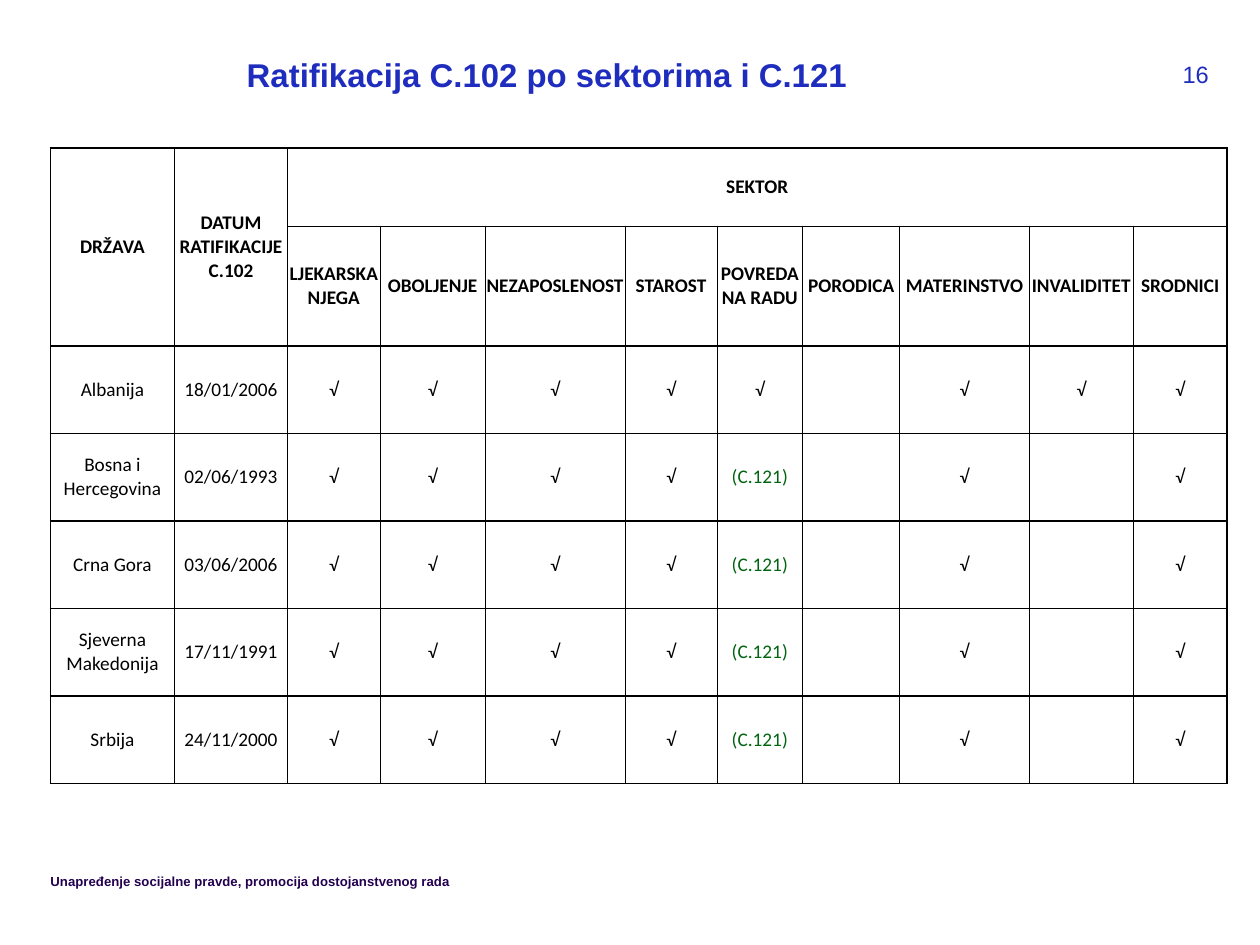
from lxml import etree
from pptx import Presentation
from pptx.dml.color import RGBColor
from pptx.enum import text as t
from pptx.oxml import ns
from pptx.util import Pt

THEME = {
    "title": {"name": "Arial", "size": Pt(18.8), "bold": True, "color": "1E2DBE"},
    "number": {"name": "Arial", "size": Pt(13.5), "bold": False, "color": "1E2DBE"},
    "footer": {"name": "Arial", "size": Pt(7.5), "bold": True, "color": "230050"},
    "header": {"name": "Calibri", "size": Pt(11), "bold": True, "color": "000000"},
    "body": {"name": "Calibri", "size": Pt(11), "bold": False, "color": "000000"},
    "note": {"name": "Calibri", "size": Pt(11), "bold": False, "color": "006411"},
    "border": "000000",
}
SECTORS = ["LJEKARSKA NJEGA", "OBOLJENJE", "NEZAPOSLENOST", "STAROST",
           "POVREDA NA RADU", "PORODICA", "MATERINSTVO", "INVALIDITET", "SRODNICI"]
YES, OTHER = "√", "(C.121)"
ALBANIA = [YES] * 5 + ["", YES, YES, YES]
OTHERS = [YES] * 4 + [OTHER, "", YES, "", YES]
ROWS = [
    ["DRŽAVA", "DATUM RATIFIKACIJE C.102", "SEKTOR"] + [""] * 8,
    ["", ""] + SECTORS,
    ["Albanija", "18/01/2006"] + ALBANIA,
    ["Bosna i Hercegovina", "02/06/1993"] + OTHERS,
    ["Crna Gora", "03/06/2006"] + OTHERS,
    ["Sjeverna Makedonija", "17/11/1991"] + OTHERS,
    ["Srbija", "24/11/2000"] + OTHERS,
]
COLUMN_WIDTHS = [71, 64.5, 53, 60, 80, 52.5, 49, 55.5, 74, 59.5, 53.5]
ROW_HEIGHTS = [44.75, 68.5] + [50] * 5
HEAVY_COLUMN_EDGES = {0, 1, 2, len(COLUMN_WIDTHS)}


def write(frame, words, style, align):
    frame.text = words
    frame.word_wrap = True
    para = frame.paragraphs[0]
    para.alignment = align
    for key, value in THEME[style].items():
        if key == "color":
            para.font.color.rgb = RGBColor.from_string(value)
        else:
            setattr(para.font, key, value)
        for span in para.runs:
            if key == "color":
                span.font.color.rgb = RGBColor.from_string(value)
            else:
                setattr(span.font, key, value)


def add_border(cell, side, points):
    line = etree.SubElement(cell._tc.get_or_add_tcPr(), ns.qn(f"a:ln{side}"),
                            w=str(int(Pt(points))))
    fill = etree.SubElement(line, ns.qn("a:solidFill"))
    etree.SubElement(fill, ns.qn("a:srgbClr"), val=THEME["border"])


deck = Presentation()
deck.slide_width, deck.slide_height = Pt(720), Pt(540)
page = deck.slides.add_slide(deck.slide_layouts[5])

# Title, footer and page number
title = page.shapes.title
footer = page.shapes.add_textbox(0, 0, 0, 0)
number = page.shapes.add_textbox(0, 0, 0, 0)
left, right, center = t.PP_ALIGN.LEFT, t.PP_ALIGN.RIGHT, t.PP_ALIGN.CENTER
for box, words, style, align, place in [
    (title, "Ratifikacija C.102 po sektorima i C.121", "title", left, (141, 34, 395, 34.5)),
    (footer, "Unapređenje socijalne pravde, promocija dostojanstvenog rada", "footer",
     left, (28.8, 499, 331, 14.5)),
    (number, "16", "number", right, (659, 34, 31.7, 22)),
]:
    box.left, box.top, box.width, box.height = map(Pt, place)
    frame = box.text_frame
    write(frame, words, style, align)
    for key, value in {"margin_left": 0, "margin_top": 0, "margin_right": 0,
                       "margin_bottom": 0, "vertical_anchor": t.MSO_ANCHOR.TOP,
                       "auto_size": t.MSO_AUTO_SIZE.NONE}.items():
        setattr(frame, key, value)
title.text_frame.paragraphs[0].line_spacing = 0.9

# Ratification table
table = page.shapes.add_table(len(ROWS), len(COLUMN_WIDTHS), Pt(28.8), Pt(84.5),
                              Pt(sum(COLUMN_WIDTHS)), Pt(sum(ROW_HEIGHTS))).table
table.first_row = table.horz_banding = False
for column, width in zip(table.columns, COLUMN_WIDTHS):
    column.width = Pt(width)
for row, height in zip(table.rows, ROW_HEIGHTS):
    row.height = Pt(height)
for start, end in [((0, 0), (1, 0)), ((0, 1), (1, 1)), ((0, 2), (0, 10))]:
    table.cell(*start).merge(table.cell(*end))

for r, words_in_row in enumerate(ROWS):
    for c, words in enumerate(words_in_row):
        cell = table.cell(r, c)
        if cell.is_spanned:
            continue
        style = "header" if r < 2 else "note" if words == OTHER else "body"
        write(cell.text_frame, words, style, center)
        for key, value in {"margin_left": 0, "margin_top": 0, "margin_right": 0,
                           "margin_bottom": 0,
                           "vertical_anchor": t.MSO_ANCHOR.MIDDLE}.items():
            setattr(cell, key, value)
        wide = cell.span_width if cell.is_merge_origin else 1
        tall = cell.span_height if cell.is_merge_origin else 1
        for side, edge in [("L", c), ("R", c + wide)]:
            add_border(cell, side, 1 if edge in HEAVY_COLUMN_EDGES else 0.5)
        for side, edge in [("T", r), ("B", r + tall)]:
            add_border(cell, side, 0.5 if edge == 1 else 1)
        cell.fill.background()

deck.save("out.pptx")
